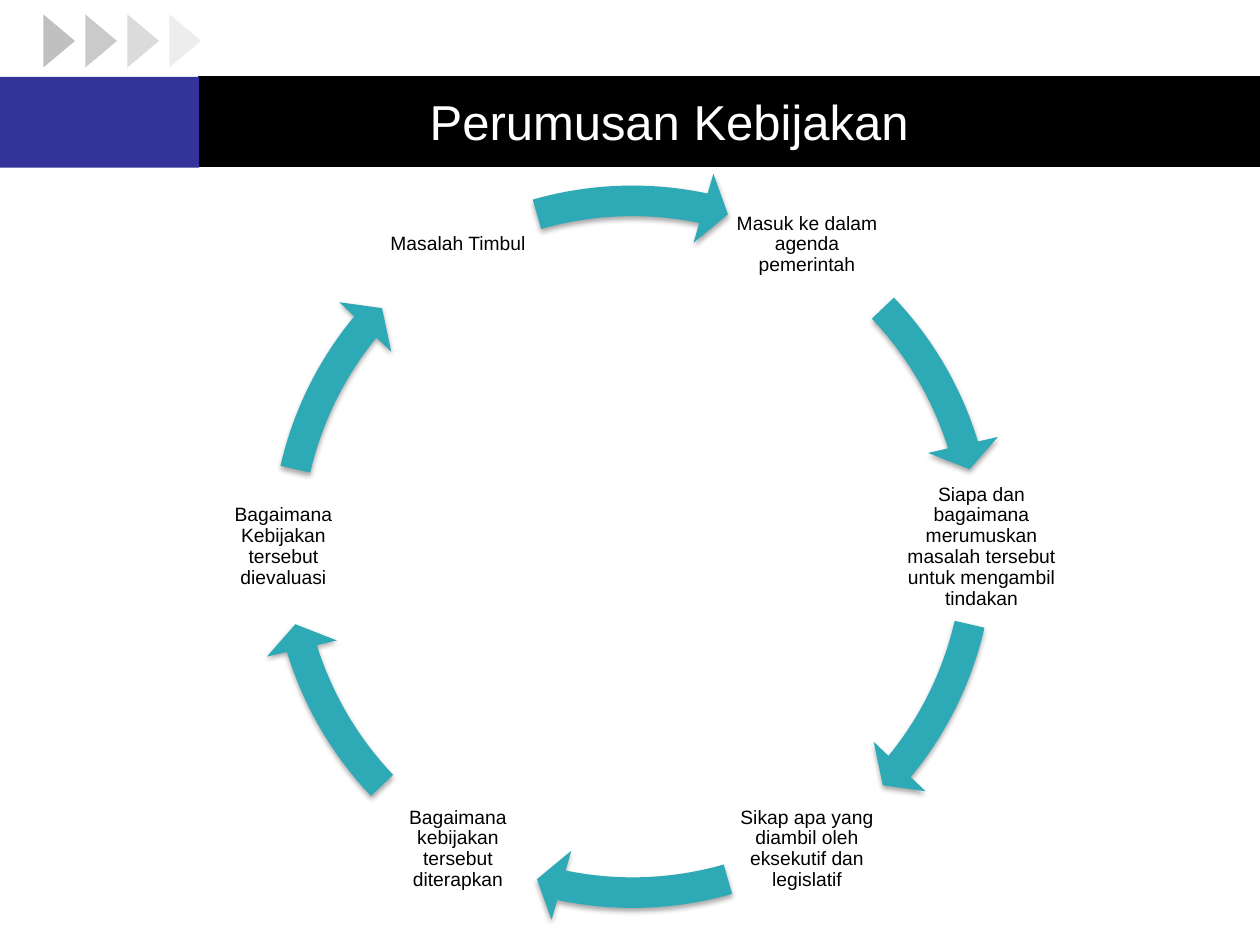
import math
from dataclasses import dataclass

from lxml import etree
from pptx import Presentation
from pptx import util as u
from pptx.dml.color import RGBColor
from pptx.enum import shapes, text
from pptx.oxml.ns import qn

COLORS = {
    "black": "000000",
    "white": "FFFFFF",
    "blue": "333399",
    "gray": "C0C0C0",
    "teal": "2EA9B6",
}
FONT = "Arial"
CENTER_X, CENTER_Y = 5.02, 4.34
LABEL_RADIUS, LABEL_SIZE = 2.77, 1.24
RING_SIZE = 6.06


@dataclass
class Step:
    label: str
    angle: float
    arrow_start: float
    arrow_end: float


STEPS = [
    Step("Masuk ke dalam agenda pemerintah", -60, 316.39, 342.88),
    Step("Siapa dan bagaimana merumuskan masalah tersebut untuk mengambil tindakan",
         0, 12.95, 39.44),
    Step("Sikap apa yang diambil oleh eksekutif dan legislatif", 60, 73.98, 101.85),
    Step("Bagaimana kebijakan tersebut diterapkan", 120, 136.39, 162.88),
    Step("Bagaimana Kebijakan tersebut dievaluasi", 180, 192.95, 219.44),
    Step("Masalah Timbul", 240, 253.98, 281.85),
]


def color(name: str) -> RGBColor:
    return RGBColor.from_string(COLORS[name])


def add_filled(parent, kind, left: float, top: float, width: float, height: float, fill: str):
    shape = parent.add_shape(kind, u.Inches(left), u.Inches(top), u.Inches(width), u.Inches(height))
    shape.shadow.inherit = False
    shape.fill.solid()
    shape.fill.fore_color.rgb = color(fill)
    shape.line.fill.background()
    return shape


def set_alpha(color_element, percent: int) -> None:
    etree.SubElement(color_element, qn("a:alpha")).set("val", str(percent * 1000))


def format_text(frame, content: str, size: float, color_name: str) -> None:
    frame.text = content
    frame.word_wrap = True
    frame.vertical_anchor = text.MSO_ANCHOR.MIDDLE
    paragraph = frame.paragraphs[0]
    paragraph.alignment = text.PP_ALIGN.CENTER
    font = paragraph.runs[0].font
    font.name = FONT
    font.size = u.Pt(size)
    font.color.rgb = color(color_name)


def add_header(slide) -> None:
    rectangle = shapes.MSO_SHAPE.RECTANGLE
    bar = add_filled(slide.shapes, rectangle, 1.58, 0.61, 8.42, 0.71, "black")
    bar.line.color.rgb = color("black")
    bar.line.width = u.Pt(0.75)
    add_filled(slide.shapes, rectangle, 0, 0.61, 1.58, 0.72, "blue")
    for index, opacity in enumerate((100, 84, 56, 27)):
        triangle = add_filled(slide.shapes, shapes.MSO_SHAPE.ISOSCELES_TRIANGLE,
                              0.26 + index / 3, 0.2, 0.42, 0.25, "gray")
        triangle.rotation = 90
        if opacity < 100:
            fill = triangle._element.spPr.find(qn("a:solidFill"))
            set_alpha(fill[0], opacity)


def add_title(slide) -> None:
    title = slide.shapes.title
    title.left, title.top = u.Inches(2.06), u.Inches(0.65)
    title.width, title.height = u.Inches(6.5), u.Inches(0.62)
    format_text(title.text_frame, "Perumusan Kebijakan", 28, "white")
    slide.shapes._spTree.append(title._element)


def add_shadow(shape) -> None:
    effects = shape._element.spPr.find(qn("a:effectLst"))
    shadow = etree.SubElement(effects, qn("a:outerShdw"))
    settings = {"blurRad": u.Pt(3.1), "dist": u.Pt(1.8), "dir": 90 * 60000, "rotWithShape": 0}
    for name, value in settings.items():
        shadow.set(name, str(int(value)))
    shadow_color = etree.SubElement(shadow, qn("a:srgbClr"))
    shadow_color.set("val", COLORS["black"])
    set_alpha(shadow_color, 35)


def add_step(parent, step: Step) -> None:
    angle = math.radians(step.angle)
    left = CENTER_X + LABEL_RADIUS * math.cos(angle) - LABEL_SIZE / 2
    top = CENTER_Y + LABEL_RADIUS * math.sin(angle) - LABEL_SIZE / 2
    label = parent.add_textbox(u.Inches(left), u.Inches(top),
                               u.Inches(LABEL_SIZE), u.Inches(LABEL_SIZE))
    frame = label.text_frame
    frame.margin_left = frame.margin_right = u.Inches(0.02)
    frame.margin_top = frame.margin_bottom = u.Inches(0.02)
    format_text(frame, step.label, 11, "black")
    frame.paragraphs[0].line_spacing = 0.9

    arrow = add_filled(parent, shapes.MSO_SHAPE.CIRCULAR_ARROW, CENTER_X - RING_SIZE / 2,
                       CENTER_Y - RING_SIZE / 2, RING_SIZE, RING_SIZE, "teal")
    units_per_degree = 0.6
    values = (0.04, 2.5, step.arrow_end * units_per_degree,
              step.arrow_start * units_per_degree, 0.047)
    for index, value in enumerate(values):
        arrow.adjustments[index] = value
    add_shadow(arrow)


def main() -> None:
    presentation = Presentation()
    presentation.slide_width, presentation.slide_height = u.Inches(10), u.Inches(7.5)
    slide = presentation.slides.add_slide(presentation.slide_layouts[5])
    add_header(slide)
    add_title(slide)
    cycle = slide.shapes.add_group_shape()
    for step in STEPS:
        add_step(cycle.shapes, step)
    presentation.save("out.pptx")


if __name__ == "__main__":
    main()
